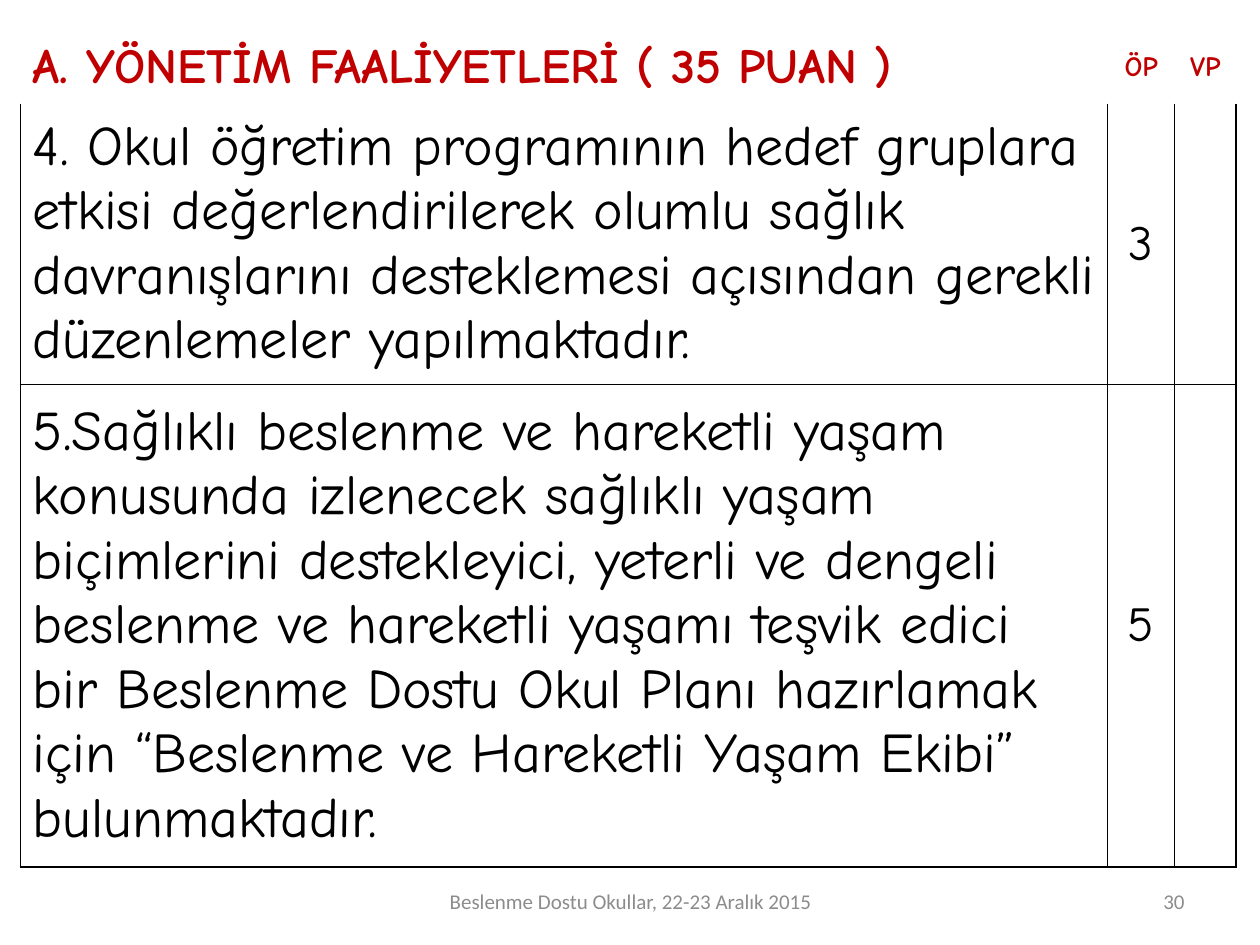
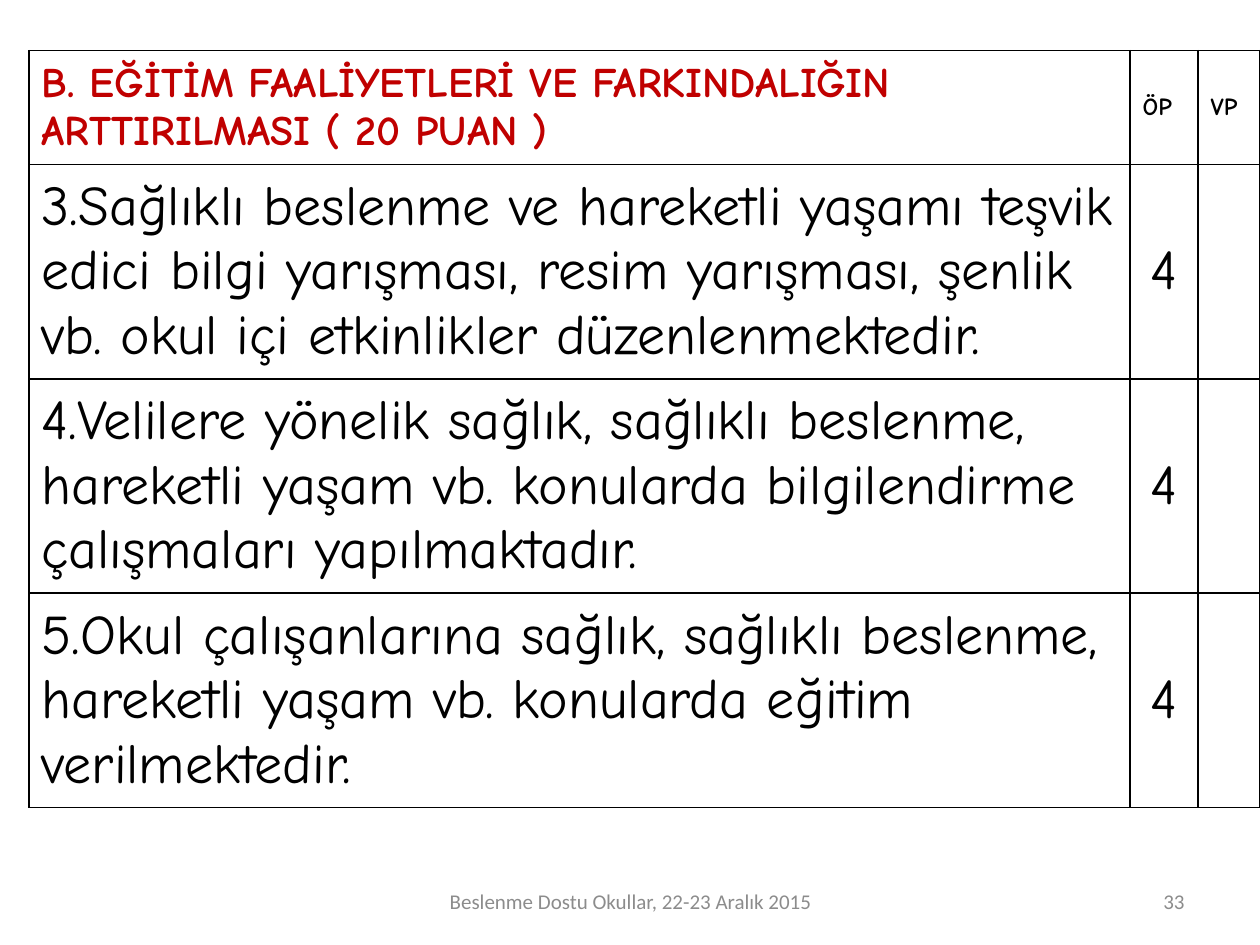
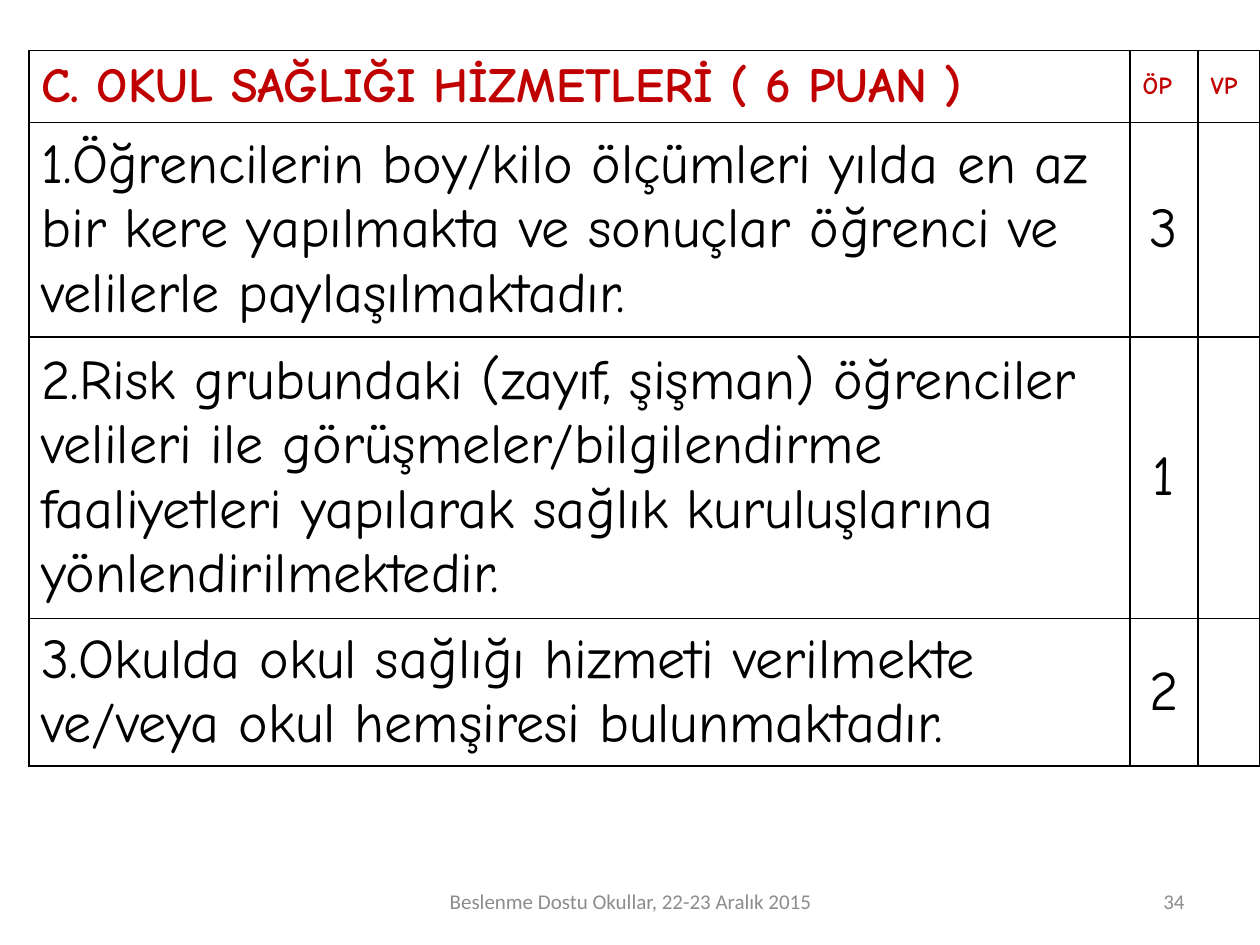
import dataclasses

import lxml.etree
import pptx
import pptx.dml.color
import pptx.enum.text
import pptx.oxml
import pptx.oxml.ns
import pptx.util

Cm = pptx.util.Cm
Align = pptx.enum.text.PP_ALIGN
Anchor = pptx.enum.text.MSO_ANCHOR


@dataclasses.dataclass(frozen=True)
class Theme:
    red: str = "C00000"
    black: str = "000000"
    white: str = "FFFFFF"
    gray: str = "8C8C8C"
    face: str = "Comic Neue"
    plain: str = "Calibri"
    large: int = 32
    head: int = 28
    long: int = 24
    label: int = 16
    small: int = 14
    foot: int = 12
    rule: int = 1


@dataclasses.dataclass(frozen=True)
class Item:
    text: str
    score: str
    high: float
    auto: bool = False


@dataclasses.dataclass(frozen=True)
class Sheet:
    number: str
    title: str
    high: float
    items: tuple
    left: float = 0.58
    top: float = 1.02
    cols: tuple = (22.2, 1.37, 1.24)
    size: int = Theme.head
    label: int = Theme.small
    tint: str = Theme.red
    align: Align = Align.LEFT
    score: int = Theme.large
    framed: bool = True


theme = Theme()
FOOTER = "Beslenme Dostu Okullar, 22-23 Aralık 2015"

SHEETS = (
    Sheet(
        "30", "A. YÖNETİM FAALİYETLERİ ( 35 PUAN )", 1.45,
        (
            Item("4. Okul öğretim programının hedef gruplara etkisi "
                 "değerlendirilerek olumlu sağlık davranışlarını desteklemesi "
                 "açısından gerekli düzenlemeler yapılmaktadır.", "3", 5.66),
            Item("5.Sağlıklı beslenme ve hareketli yaşam konusunda izlenecek "
                 "sağlıklı yaşam biçimlerini destekleyici, yeterli ve dengeli "
                 "beslenme ve hareketli yaşamı teşvik edici bir Beslenme Dostu "
                 "Okul Planı hazırlamak için “Beslenme ve Hareketli Yaşam "
                 "Ekibi” bulunmaktadır.", "5", 9.73),
        ),
        left=0.41, top=0.64, cols=(21.92, 1.35, 1.24), label=theme.label,
        align=Align.CENTER, score=theme.head, framed=False,
    ),
    Sheet(
        "33", "B. EĞİTİM FAALİYETLERİ VE FARKINDALIĞIN ARTTIRILMASI ( 20 PUAN )", 2.3,
        (
            Item("3.Sağlıklı beslenme ve hareketli yaşamı teşvik edici bilgi "
                 "yarışması, resim yarışması, şenlik vb. okul içi etkinlikler "
                 "düzenlenmektedir.", "4", 4.32),
            Item("4.Velilere yönelik sağlık, sağlıklı beslenme, hareketli yaşam "
                 "vb. konularda bilgilendirme çalışmaları yapılmaktadır.", "4", 4.32),
            Item("5.Okul çalışanlarına sağlık, sağlıklı beslenme, hareketli "
                 "yaşam vb. konularda eğitim verilmektedir.", "4", 4.32),
        ),
        size=theme.long, tint=theme.black,
    ),
    Sheet(
        "34", "C. OKUL SAĞLIĞI HİZMETLERİ ( 6 PUAN )", 1.45,
        (
            Item("Öğrencilerin boy/kilo ölçümleri yılda en az bir kere "
                 "yapılmakta ve sonuçlar öğrenci ve velilerle "
                 "paylaşılmaktadır.", "3", 4.32, auto=True),
            Item("2.Risk grubundaki (zayıf, şişman) öğrenciler velileri ile "
                 "görüşmeler/bilgilendirme faaliyetleri yapılarak sağlık "
                 "kuruluşlarına yönlendirilmektedir.", "1", 5.66),
            Item("3.Okulda okul sağlığı hizmeti verilmekte ve/veya okul "
                 "hemşiresi bulunmaktadır.", "2", 2.98),
        ),
    ),
)


def paint(color):
    return pptx.dml.color.RGBColor.from_string(color)


def write(frame, text, size, color, face, align=Align.LEFT, bold=False):
    para = frame.paragraphs[0]
    para.alignment = align
    run = para.add_run()
    run.text = text
    font = run.font
    font.size = pptx.util.Pt(size)
    font.name = face
    font.bold = bold
    font.color.rgb = paint(color)
    return para


def number(para):
    props = para._p.get_or_add_pPr()
    props.set("marL", "0")
    props.set("indent", "0")
    mark = lxml.etree.SubElement(props, pptx.oxml.ns.qn("a:buAutoNum"))
    mark.set("type", "arabicPeriod")


def edge(cell, drawn):
    props = cell._tc.get_or_add_tcPr()
    for side, shown in zip("LRTB", drawn):
        line = lxml.etree.SubElement(props, pptx.oxml.ns.qn("a:ln" + side))
        line.set("w", str(pptx.util.Pt(theme.rule) if shown else 0))
        kind = "a:solidFill" if shown else "a:noFill"
        fill = lxml.etree.SubElement(line, pptx.oxml.ns.qn(kind))
        if shown:
            tint = lxml.etree.SubElement(fill, pptx.oxml.ns.qn("a:srgbClr"))
            tint.set("val", theme.black)


def frame_cells(table, framed):
    last = len(table.rows) - 1
    for place, row in enumerate(table.rows):
        body = framed or place > 0
        top = framed or place > 1
        base = framed or 0 < place <= last
        for cell in row.cells:
            edge(cell, (body, body, top, base))
            cell.fill.solid()
            cell.fill.fore_color.rgb = paint(theme.white)
            cell.vertical_anchor = Anchor.MIDDLE


def add_grid(slide, sheet):
    highs = [sheet.high] + [item.high for item in sheet.items]
    shape = slide.shapes.add_table(
        len(highs), len(sheet.cols), Cm(sheet.left), Cm(sheet.top),
        Cm(sum(sheet.cols)), Cm(sum(highs)))
    table = shape.table
    table.first_row = False
    table.horz_banding = False
    for col, width in zip(table.columns, sheet.cols):
        col.width = Cm(width)
    for row, high in zip(table.rows, highs):
        row.height = Cm(high)
    frame_cells(table, sheet.framed)

    write(table.cell(0, 0).text_frame, sheet.title, sheet.size,
          theme.red, theme.face, bold=True)
    for spot, label in enumerate(("ÖP", "VP"), 1):
        write(table.cell(0, spot).text_frame, label, sheet.label,
              sheet.tint, theme.face, sheet.align, True)
    for place, item in enumerate(sheet.items, 1):
        para = write(table.cell(place, 0).text_frame, item.text,
                     theme.large, theme.black, theme.face)
        if item.auto:
            number(para)
        write(table.cell(place, 1).text_frame, item.score, sheet.score,
              theme.black, theme.face, Align.CENTER)


def add_note(slide, text, left, width, align):
    box = slide.shapes.add_textbox(Cm(left), Cm(17.65), Cm(width), Cm(1.02))
    frame = box.text_frame
    frame.word_wrap = True
    frame.vertical_anchor = Anchor.MIDDLE
    write(frame, text, theme.foot, theme.gray, theme.plain, align)


def main():
    deck = pptx.Presentation()
    deck.slide_width = Cm(25.4)
    deck.slide_height = Cm(19.05)
    for sheet in SHEETS:
        slide = deck.slides.add_slide(deck.slide_layouts[6])
        add_grid(slide, sheet)
        add_note(slide, FOOTER, 8.69, 8.05, Align.CENTER)
        add_note(slide, sheet.number, 18.21, 5.92, Align.RIGHT)
    deck.save("out.pptx")


if __name__ == "__main__":
    main()
